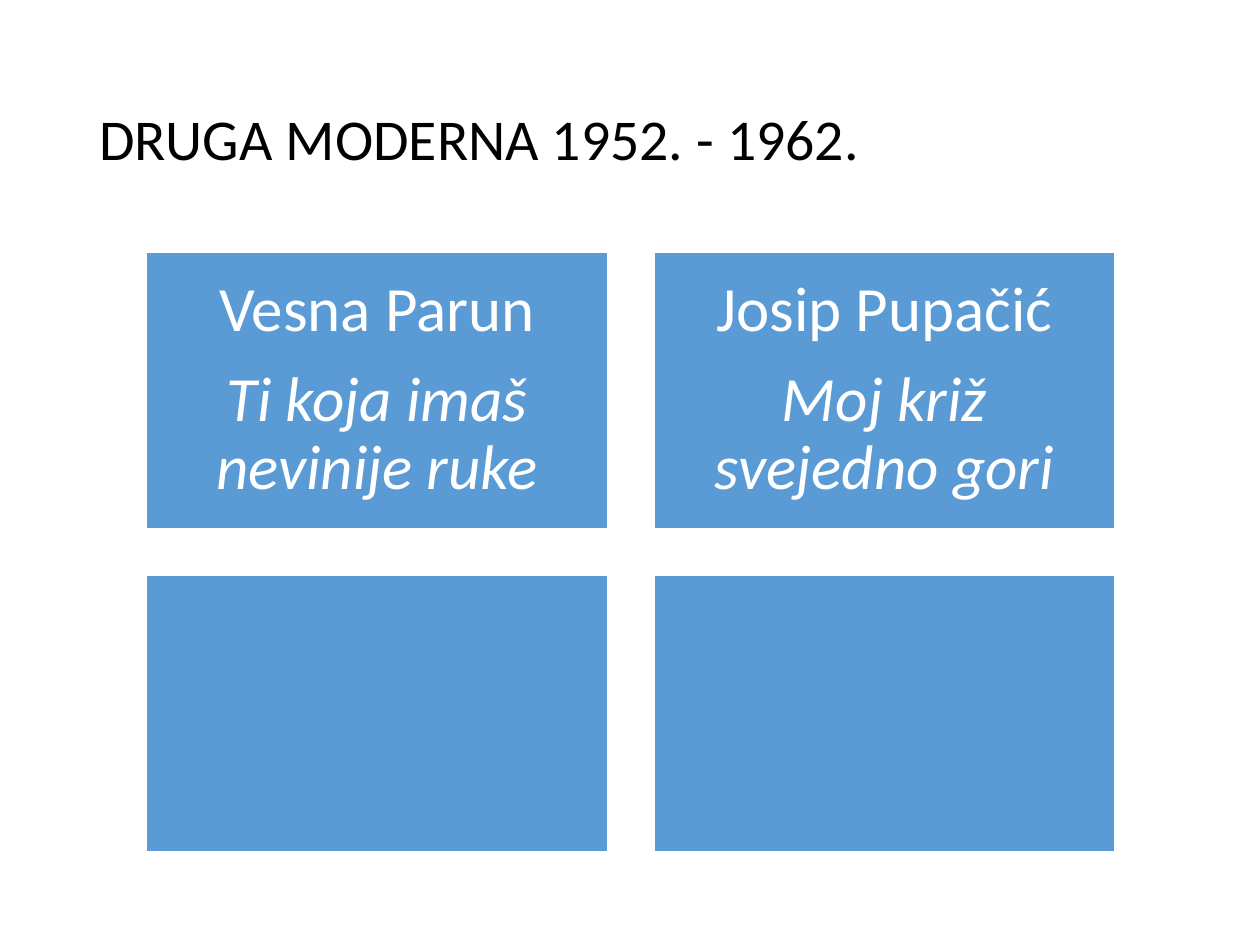
from dataclasses import dataclass

from pptx import Presentation
from pptx.dml.color import RGBColor
from pptx.enum.shapes import MSO_SHAPE
from pptx.enum.text import MSO_ANCHOR, PP_ALIGN
from pptx.slide import Slide
from pptx.text.text import _Paragraph
from pptx.util import Cm, Pt

RECTANGLE = MSO_SHAPE.RECTANGLE
MIDDLE = MSO_ANCHOR.MIDDLE
LEFT, CENTER = PP_ALIGN.LEFT, PP_ALIGN.CENTER

BLACK = RGBColor(0x00, 0x00, 0x00)
WHITE = RGBColor(0xFF, 0xFF, 0xFF)
BLUE = RGBColor(0x5B, 0x9B, 0xD5)
FONT = "Calibri"

GRID_LEFT, GRID_TOP = Cm(2.95), Cm(5.08)
CARD_WIDTH, CARD_HEIGHT = Cm(9.3), Cm(5.58)
GAP = Cm(0.93)
CARD_INSET = Cm(0.38)
COLUMNS = 2


@dataclass
class Poem:
    poet: str = ""
    title: str = ""


POEMS = [
    Poem("Vesna Parun", "Ti koja imaš nevinije ruke"),
    Poem("Josip Pupačić", "Moj križ svejedno gori"),
    Poem(),
    Poem(),
]


def format_paragraph(paragraph: _Paragraph, size: int, color: RGBColor,
                     alignment: PP_ALIGN, italic: bool = False) -> None:
    paragraph.alignment = alignment
    paragraph.line_spacing = 0.9
    for run in paragraph.runs:
        run.font.name = FONT
        run.font.size = Pt(size)
        run.font.color.rgb = color
        run.font.italic = italic


def add_heading(slide: Slide, text: str) -> None:
    heading = slide.shapes.add_textbox(Cm(1.75), Cm(1.02), Cm(21.9), Cm(3.68))
    frame = heading.text_frame
    frame.word_wrap = True
    frame.vertical_anchor = MIDDLE
    frame.text = text
    format_paragraph(frame.paragraphs[0], 33, BLACK, LEFT)


def add_card(slide: Slide, poem: Poem, row: int, column: int) -> None:
    card = slide.shapes.add_shape(
        RECTANGLE,
        GRID_LEFT + column * (CARD_WIDTH + GAP),
        GRID_TOP + row * (CARD_HEIGHT + GAP),
        CARD_WIDTH, CARD_HEIGHT)
    card.shadow.inherit = False
    card.fill.solid()
    card.fill.fore_color.rgb = BLUE
    card.line.color.rgb = WHITE
    card.line.width = Pt(1)
    if not poem.poet:
        return

    frame = card.text_frame
    frame.word_wrap = True
    frame.vertical_anchor = MIDDLE
    frame.margin_left = frame.margin_right = CARD_INSET
    frame.margin_top = frame.margin_bottom = CARD_INSET
    frame.text = f"{poem.poet}\n{poem.title}"
    poet, title = frame.paragraphs
    format_paragraph(poet, 36, WHITE, CENTER)
    format_paragraph(title, 36, WHITE, CENTER, italic=True)
    poet.space_after = title.space_after = Pt(12.6)


def main() -> None:
    presentation = Presentation()
    presentation.slide_width, presentation.slide_height = Cm(25.4), Cm(19.05)
    slide = presentation.slides.add_slide(presentation.slide_layouts[6])
    add_heading(slide, "DRUGA MODERNA 1952. - 1962.")
    for index, poem in enumerate(POEMS):
        row, column = divmod(index, COLUMNS)
        add_card(slide, poem, row, column)
    presentation.save("out.pptx")


if __name__ == "__main__":
    main()
